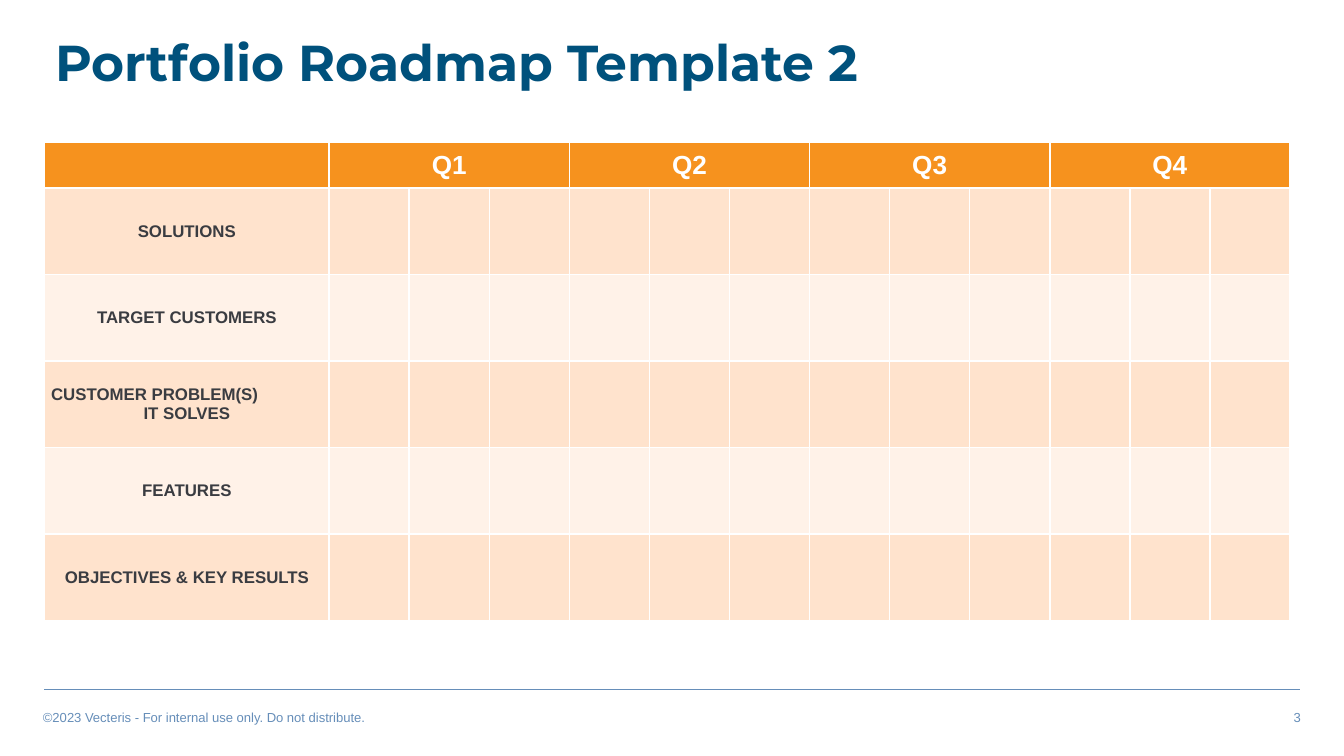
"""Build a quarterly portfolio roadmap slide with an empty planning grid."""
from lxml import etree
from pptx import Presentation
from pptx.dml.color import RGBColor
from pptx.enum.shapes import MSO_CONNECTOR
from pptx.enum.text import MSO_ANCHOR, PP_ALIGN
from pptx.oxml.ns import qn
from pptx.util import Inches, Pt

LEFT, CENTER, RIGHT = PP_ALIGN.LEFT, PP_ALIGN.CENTER, PP_ALIGN.RIGHT
MIDDLE = MSO_ANCHOR.MIDDLE
STRAIGHT = MSO_CONNECTOR.STRAIGHT

THEME = {
    "title": ("Montserrat", 27, "00517C", True),
    "quarter": ("Arial", 14, "FFFFFF", True),
    "label": ("Arial", 9, "3A3C41", True),
    "footer": ("Arial", 7, "668EB9", False),
    "header_fill": "F6921E",
    "band_fills": ("FFE3CD", "FFF2E8"),
    "border": "FFFFFF",
    "rule": "668EB9",
}
QUARTERS = ["Q1", "Q2", "Q3", "Q4"]
LABELS = ["SOLUTIONS", "TARGET CUSTOMERS", "CUSTOMER PROBLEM(S)\nIT SOLVES",
          "FEATURES", "OBJECTIVES & KEY RESULTS"]
MONTHS = 3
COLS = MONTHS * len(QUARTERS)
TABLE_LEFT, TABLE_TOP, TABLE_RIGHT, TABLE_BOTTOM = 0.33, 1.06, 9.6, 4.61
LABEL_W, HEADER_H = 2.12, 0.33
MONTH_W = (TABLE_RIGHT - TABLE_LEFT - LABEL_W) / COLS
ROW_H = (TABLE_BOTTOM - TABLE_TOP - HEADER_H) / len(LABELS)


def write(tf, text, style, align=LEFT):
    name, size, color, bold = THEME[style]
    tf.text = text
    for p in tf.paragraphs:
        p.alignment = align
        for r in p.runs:
            r.font.name, r.font.size, r.font.bold = name, Pt(size), bold
            r.font.color.rgb = RGBColor.from_string(color)


def add_text(box, text, style, align=LEFT):
    tf = slide.shapes.add_textbox(*[Inches(v) for v in box]).text_frame
    tf.word_wrap = True
    tf.margin_left = tf.margin_right = Inches(0.07)
    tf.margin_top = tf.margin_bottom = Inches(0.04)
    write(tf, text, style, align)
    return tf


prs = Presentation()
prs.slide_width = Inches(10)
prs.slide_height = prs.slide_width * 9 // 16
slide = prs.slides.add_slide(prs.slide_layouts[6])

rule = slide.shapes.add_connector(
    STRAIGHT, Inches(0.33), Inches(5.13), Inches(9.67), Inches(5.13))
rule.line.color.rgb = RGBColor.from_string(THEME["rule"])
rule.line.width = Pt(1)
etree.SubElement(rule._element.spPr, qn("a:effectLst"))

add_text((0.25, 5.24, 4, 0.19),
         "©2023 Vecteris - For internal use only. Do not distribute.", "footer")
add_text((5.75, 5.24, 4, 0.19), "3", "footer", RIGHT)
title = add_text((0.34, 0.24, 6.39, 0.57), "Portfolio Roadmap Template 2", "title")
title.paragraphs[0].line_spacing = 0.9

table = slide.shapes.add_table(
    len(LABELS) + 1, COLS + 1, Inches(TABLE_LEFT), Inches(TABLE_TOP),
    Inches(TABLE_RIGHT - TABLE_LEFT), Inches(TABLE_BOTTOM - TABLE_TOP)).table
for i, col in enumerate(table.columns):
    col.width = Inches(MONTH_W if i else LABEL_W)

for i, row in enumerate(table.rows):
    row.height = Inches(ROW_H if i else HEADER_H)
    color = THEME["band_fills"][(i - 1) % 2] if i else THEME["header_fill"]
    for cell in row.cells:
        cell.vertical_anchor = MIDDLE
        cell.margin_left = cell.margin_right = Inches(0.05)
        cell.margin_top = cell.margin_bottom = Inches(0.02)
        tc_pr = cell._tc.get_or_add_tcPr()
        for side in ("lnL", "lnR", "lnT", "lnB"):
            ln = etree.SubElement(tc_pr, qn(f"a:{side}"), w=str(Pt(1)))
            fill = etree.SubElement(ln, qn("a:solidFill"))
            etree.SubElement(fill, qn("a:srgbClr"), val=THEME["border"])
        cell.fill.solid()
        cell.fill.fore_color.rgb = RGBColor.from_string(color)

for i, quarter in enumerate(QUARTERS):
    first = 1 + i * MONTHS
    cell = table.cell(0, first)
    cell.merge(table.cell(0, first + MONTHS - 1))
    write(cell.text_frame, quarter, "quarter", CENTER)

for i, label in enumerate(LABELS, 1):
    tf = table.cell(i, 0).text_frame
    write(tf, label, "label", CENTER)
    for p in tf.paragraphs[:-1]:
        p.alignment = LEFT

prs.save("out.pptx")
